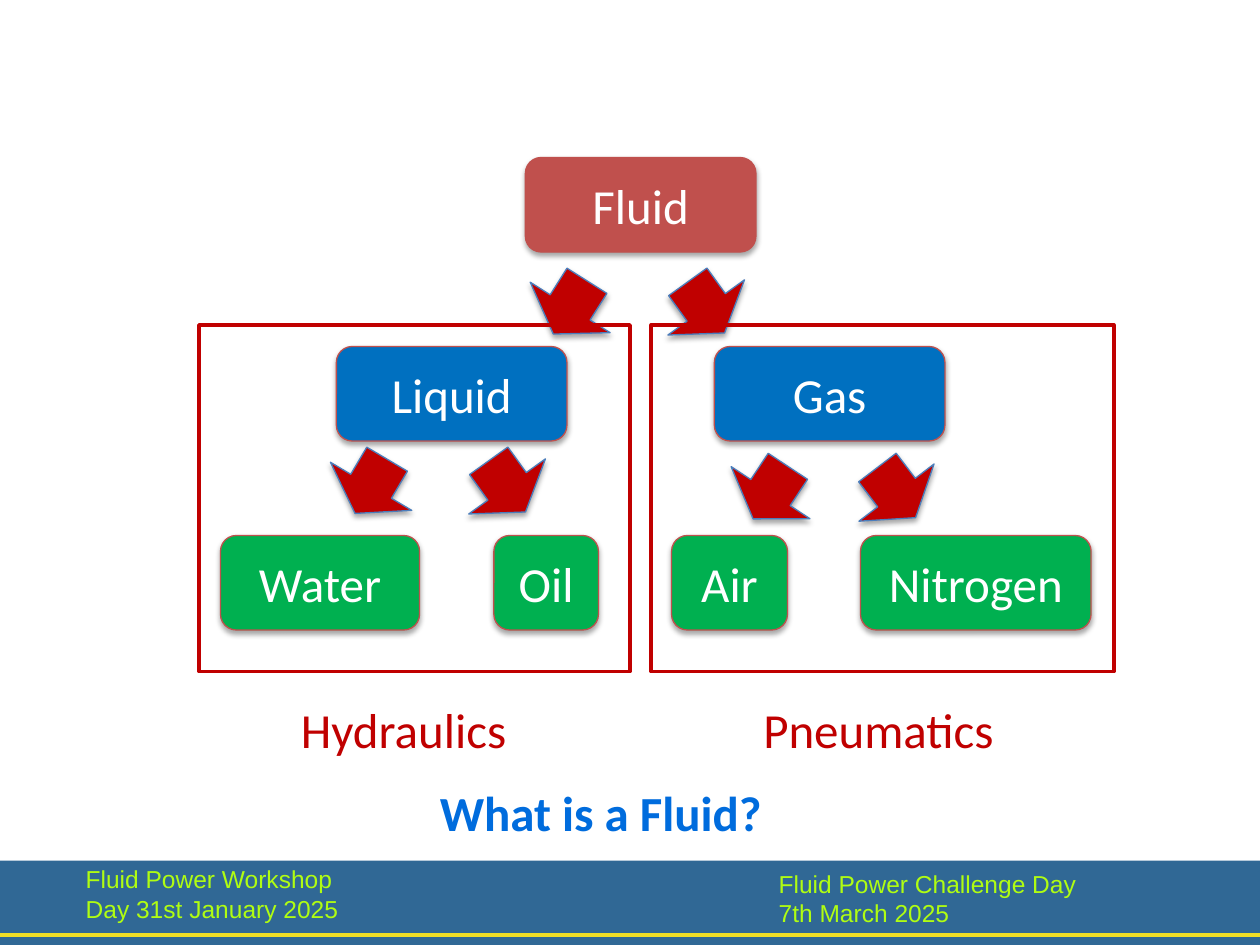
from lxml import etree
from pptx import Presentation
from pptx.dml.color import RGBColor
from pptx.enum import shapes, text
from pptx.oxml.ns import qn
from pptx.util import Inches, Pt

RED, BLUE, GREEN = "C00000", "0070C0", "00B050"
CORAL, ARROW_EDGE, WHITE = "C0504D", "4B7EBC", "FFFFFF"
NODE_HEIGHT = 0.75


def color(value):
    return RGBColor.from_string(value)


def write(shape, words, size=28, font="Calibri", fill=WHITE, bold=False,
          align=text.PP_ALIGN.LEFT, anchor=text.MSO_ANCHOR.TOP,
          wrap=True, inset=None, spacing=None):
    frame = shape.text_frame
    frame.word_wrap = wrap
    frame.vertical_anchor = anchor
    if inset is not None:
        frame.margin_left = frame.margin_right = Inches(inset)
        frame.margin_top = frame.margin_bottom = Inches(inset)
    frame.text = words
    paragraph = frame.paragraphs[0]
    paragraph.alignment = align
    if spacing:
        paragraph.line_spacing = Pt(spacing)
    for run in paragraph.runs:
        run.font.size = Pt(size)
        run.font.name = font
        run.font.bold = bold
        run.font.color.rgb = color(fill)


def add_label(slide, words, box, **style):
    label = slide.shapes.add_textbox(*map(Inches, box))
    write(label, words, **style)


def add_soft_shadow(shape):
    effects = shape._element.spPr.find(qn("a:effectLst"))
    shadow = etree.SubElement(effects, qn("a:outerShdw"), blurRad=str(Pt(3.1)),
                              dist=str(Pt(1.8)), dir="5400000", rotWithShape="0")
    tint = etree.SubElement(shadow, qn("a:srgbClr"), val="000000")
    etree.SubElement(tint, qn("a:alpha"), val="35000")


def add_block(slide, kind, box, fill=None, edge=None, width=0.75, raised=False):
    block = slide.shapes.add_shape(kind, *map(Inches, box))
    block.shadow.inherit = False
    if raised:
        add_soft_shadow(block)
    if fill:
        block.fill.solid()
        block.fill.fore_color.rgb = color(fill)
    else:
        block.fill.background()
    if edge:
        block.line.color.rgb = color(edge)
        block.line.width = Pt(width)
    else:
        block.line.fill.background()
    return block


def add_node(slide, words, left, top, width, fill):
    node = add_block(slide, shapes.MSO_SHAPE.ROUNDED_RECTANGLE,
                     (left, top, width, NODE_HEIGHT), fill, CORAL, raised=True)
    write(node, words, align=text.PP_ALIGN.CENTER, anchor=text.MSO_ANCHOR.MIDDLE)


def add_arrow_pair(slide, left, top, step, angles):
    for index, angle in enumerate(angles):
        arrow = add_block(slide, shapes.MSO_SHAPE.DOWN_ARROW,
                          (left + index * step, top, 0.75, 0.5),
                          RED, ARROW_EDGE, raised=True)
        arrow.rotation = angle


def add_family(slide, box, parent, children, arrows, caption):
    left, top, width, height = box
    name, offset = parent
    add_node(slide, name, left + offset, top + 0.17, 1.83, BLUE)
    for child, child_offset, child_width in children:
        add_node(slide, child, left + child_offset, top + 1.67, child_width, GREEN)
    arrow_offset, drop, step, angles = arrows
    add_arrow_pair(slide, left + arrow_offset, top + drop, step, angles)
    add_block(slide, shapes.MSO_SHAPE.RECTANGLE, box, edge=RED, width=2.25)
    words, caption_offset, caption_width = caption
    add_label(slide, words,
              (left + caption_offset, top + height + 0.17, caption_width, 0.57),
              fill=RED, wrap=False)


def add_footer(slide, box, notes):
    left, top, width, height = box
    add_block(slide, shapes.MSO_SHAPE.RECTANGLE, box, "306895")
    rule_top = Inches(top + 0.59)
    rule = slide.shapes.add_connector(shapes.MSO_CONNECTOR.STRAIGHT, Inches(left),
                                      rule_top, Inches(left + width), rule_top)
    rule.line.color.rgb = color("F0DE27")
    rule.line.width = Pt(2.04)
    etree.SubElement(rule._element.spPr, qn("a:effectLst"))
    for words, offset, drop, spacing in notes:
        add_label(slide, words, (left + offset, top + drop, 2.38, 0.48), size=14,
                  font="Arial", fill="B0FD12", inset=0, spacing=spacing)


def add_title(slide, words, box):
    title = slide.shapes.title
    title.left, title.top, title.width, title.height = map(Inches, box)
    write(title, words, fill="006CDD", bold=True)


def main():
    deck = Presentation()
    deck.slide_width, deck.slide_height = Inches(10), Inches(7.5)
    slide = deck.slides.add_slide(deck.slide_layouts[5])

    add_footer(slide, (0, 6.83, 10, 0.67), [
        ("Fluid Power Workshop\vDay 31st January 2025", 0.68, 0.03, 16.8),
        ("Fluid Power Challenge Day\v7th March 2025", 6.18 - 0.0, 0.07, 16.5),
    ])
    add_title(slide, "What is a Fluid?", (3.39, 6.16, 3.24, 1.12))
    add_node(slide, "Fluid", 4.17, 1.25, 1.83, CORAL)
    add_arrow_pair(slide, 4.15, 2.19, 1.08, (32.3, -35.8))
    add_family(slide, (1.58, 2.58, 3.42, 2.75), ("Liquid", 1.09),
               [("Water", 0.17, 1.58), ("Oil", 2.34, 0.83)],
               (0.99, 1.03, 1.08, (30.6, -35.7)), ("Hydraulics", 0.71, 2.04))
    add_family(slide, (5.17, 2.58, 3.67, 2.75), ("Gas", 0.5),
               [("Air", 0.16, 0.92), ("Nitrogen", 1.66, 1.83)],
               (0.57, 1.08, 1, (33.5, -37.3)), ("Pneumatics", 0.79, 2.26))
    deck.save("out.pptx")


if __name__ == "__main__":
    main()
